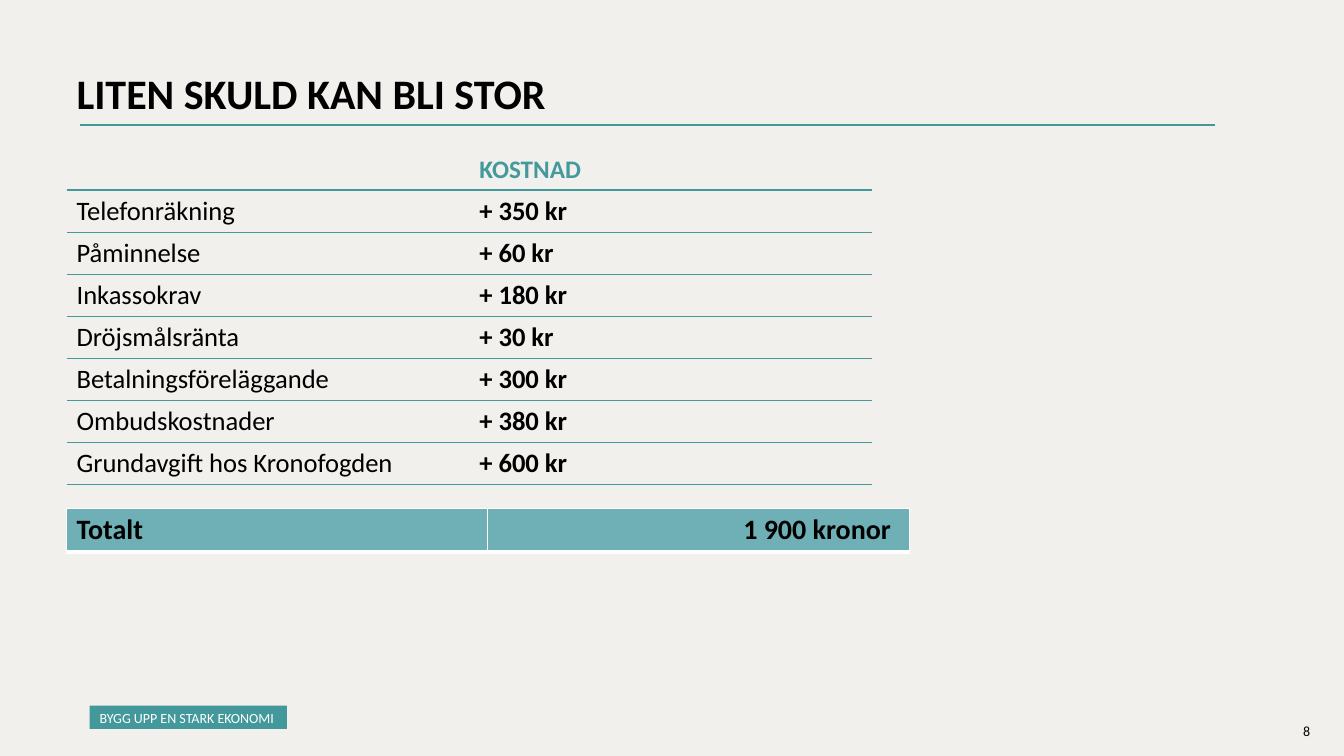
from lxml import etree
from pptx import Presentation
from pptx.dml.color import RGBColor
from pptx.enum.shapes import MSO_CONNECTOR as Connector
from pptx.enum.text import MSO_ANCHOR as Anchor, MSO_AUTO_SIZE as AutoSize, PP_ALIGN as Align
from pptx.oxml import parse_xml
from pptx.oxml.ns import nsdecls, qn
from pptx.util import Pt

BACKGROUND = RGBColor(0xF1, 0xF0, 0xEC)
TEAL = RGBColor(0x43, 0x98, 0x9B)
TABLE_TEAL = RGBColor(0x44, 0x99, 0x9C)
TOTAL_FILL = RGBColor(0x6E, 0xB0, 0xB5)
BLACK = RGBColor(0, 0, 0)
WHITE = RGBColor(0xFF, 0xFF, 0xFF)

FONT = "Calibri"
COSTS = [
    ("Telefonräkning", "+ 350 kr"),
    ("Påminnelse", "+ 60 kr"),
    ("Inkassokrav", "+ 180 kr"),
    ("Dröjsmålsränta", "+ 30 kr"),
    ("Betalningsföreläggande", "+ 300 kr"),
    ("Ombudskostnader", "+ 380 kr"),
    ("Grundavgift hos Kronofogden", "+ 600 kr"),
]


def place(shape, box):
    shape.left, shape.top, shape.width, shape.height = (Pt(length) for length in box)


def write(frame, text, size, color=BLACK, bold=False, align=Align.LEFT):
    frame.text = text
    para = frame.paragraphs[0]
    para.alignment = align
    for span in para.runs:
        font = span.font
        font.name, font.size, font.bold = FONT, Pt(size), bold
        font.color.rgb = color


def set_borders(cell, **widths):
    """Draw the sides given as L, R, T or B=(color, points) and hide the others."""
    properties = cell._tc.get_or_add_tcPr()
    for position, side in enumerate("LRTB"):
        color, width = widths.get(side, (None, 0))
        paint = (f'<a:solidFill><a:srgbClr val="{color}"/></a:solidFill>'
                 if color else "<a:noFill/>")
        line = parse_xml(f'<a:ln{side} {nsdecls("a")} w="{Pt(width)}">{paint}</a:ln{side}>')
        properties.insert(position, line)


def add_plain_table(slide, box, rows, columns):
    table = slide.shapes.add_table(rows, columns, *(Pt(length) for length in box)).table
    table.first_row = table.horz_banding = False
    return table


def add_title(slide, box):
    title = slide.shapes.title
    place(title, box)
    frame = title.text_frame
    frame.auto_size, frame.vertical_anchor = AutoSize.NONE, Anchor.TOP
    write(frame, "LITEN SKULD KAN BLI STOR", 30, bold=True)
    frame.paragraphs[0].line_spacing = 0.9

    left, top, width, _ = box
    rule_left, rule_top = left + 9.4, top + 40.3
    rule = slide.shapes.add_connector(
        Connector.STRAIGHT, Pt(rule_left), Pt(rule_top), Pt(left + width - 7.9), Pt(rule_top))
    rule.line.color.rgb, rule.line.width = TEAL, Pt(1.5)
    etree.SubElement(rule._element.spPr, qn("a:effectLst"))


def add_cost_table(slide, box):
    rows = [("", "KOSTNAD"), *COSTS]
    table = add_plain_table(slide, box, len(rows), 2)
    header_line, row_line = (TABLE_TEAL, 1), (TABLE_TEAL, 0.5)
    for row, texts in enumerate(rows):
        for column, text in enumerate(texts):
            cell = table.cell(row, column)
            cell.fill.background()
            if row == 0:
                write(cell.text_frame, text, 18, TABLE_TEAL, bold=True)
                set_borders(cell, B=header_line)
            else:
                write(cell.text_frame, text, 19, bold=column == 1)
                set_borders(cell, T=header_line if row == 1 else row_line, B=row_line)


def add_total_table(slide, box):
    table = add_plain_table(slide, box, 1, 2)
    for column, (text, align) in enumerate([("Totalt", Align.LEFT), ("1 900 kronor", Align.RIGHT)]):
        cell = table.cell(0, column)
        cell.fill.solid()
        cell.fill.fore_color.rgb = TOTAL_FILL
        cell.margin_right = Pt(13)
        write(cell.text_frame, text, 20, bold=True, align=align)
        thin = (WHITE, 1)
        set_borders(cell, L=thin, R=thin, T=thin, B=(WHITE, 3))


def add_footer_tag(slide, box):
    tag = slide.placeholders[1]
    place(tag, box)
    tag.fill.solid()
    tag.fill.fore_color.rgb = TEAL
    frame = tag.text_frame
    frame.auto_size, frame.vertical_anchor = AutoSize.NONE, Anchor.MIDDLE
    frame.margin_left, frame.margin_top = Pt(7.2), Pt(5.8)
    frame.margin_right, frame.margin_bottom = Pt(2.9), Pt(3.6)
    write(frame, "BYGG UPP EN STARK EKONOMI", 10, WHITE)
    para = frame.paragraphs[0]
    para.line_spacing, para.space_before = 0.9, Pt(0)
    properties = para._p.get_or_add_pPr()
    properties.set("marL", "0")
    properties.set("indent", "0")
    etree.SubElement(properties, qn("a:buNone"))


def add_page_number(slide, box):
    number = slide.shapes.add_textbox(*(Pt(length) for length in box))
    number.text_frame.word_wrap = True
    write(number.text_frame, "8", 10)


def main():
    deck = Presentation()
    deck.slide_width, deck.slide_height = Pt(960), Pt(540)
    slide = deck.slides.add_slide(deck.slide_layouts[1])
    slide.background.fill.solid()
    slide.background.fill.fore_color.rgb = BACKGROUND

    add_page_number(slide, (923.8, 512.6, 28.8, 19.4))
    add_title(slide, (47.5, 49, 828, 104.4))
    add_cost_table(slide, (47.5, 106.5, 575.4, 233.6))
    add_total_table(slide, (47.5, 363, 602, 31))
    add_footer_tag(slide, (64, 504, 141, 16.6))
    deck.save("out.pptx")


if __name__ == "__main__":
    main()
